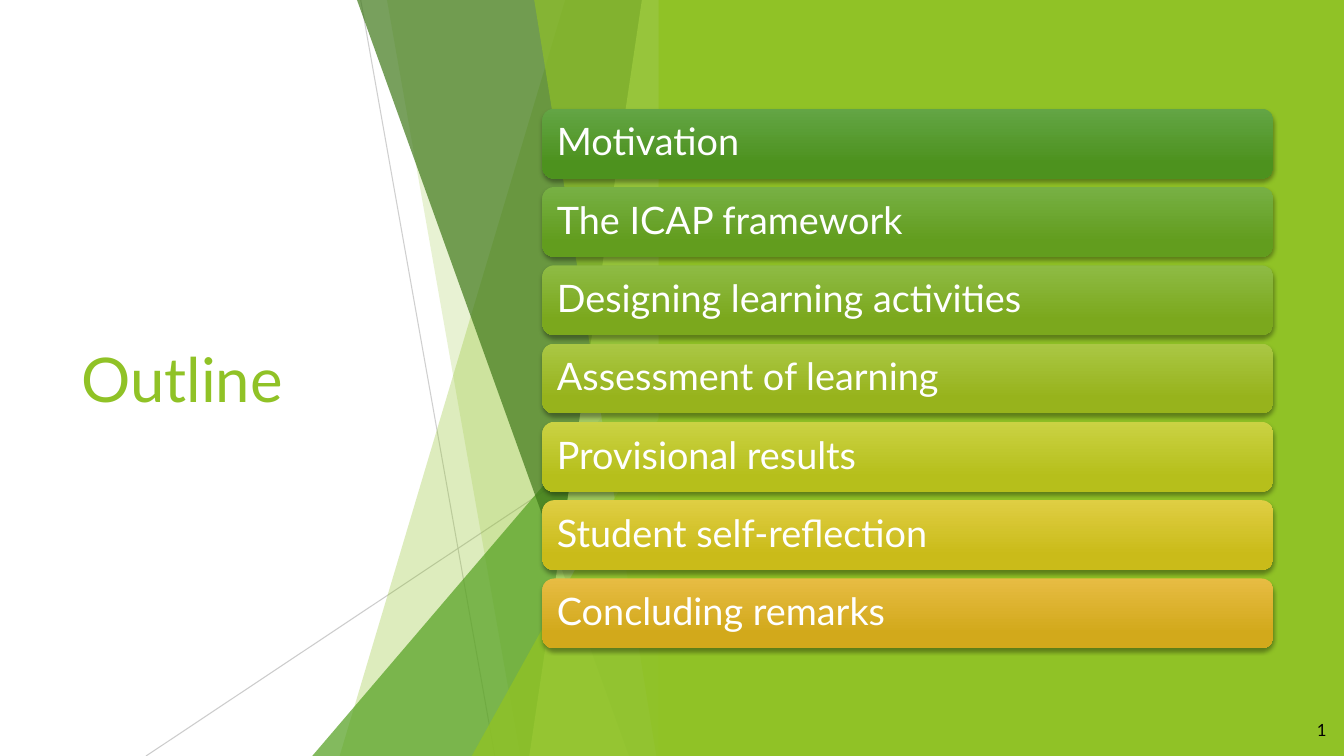
"""Build the outline slide with its faceted backdrop and agenda bars."""
from lxml import etree
from pptx import Presentation
from pptx.dml.color import RGBColor
from pptx.enum import shapes, text
from pptx.oxml import ns
from pptx.util import Cm, Pt

WIDTH, HEIGHT = 33.87, 19.05
FONT = "Lato"
WHITE = RGBColor(0xFF, 0xFF, 0xFF)
BLACK = RGBColor(0x00, 0x00, 0x00)
GREY = RGBColor(0xBF, 0xBF, 0xBF)
LIME = RGBColor(0x90, 0xC2, 0x26)
PALE_LIME = RGBColor(0xC0, 0xE4, 0x74)
GREEN = RGBColor(0x54, 0xA0, 0x21)
DARK_GREEN = RGBColor(0x3F, 0x78, 0x19)

FACET_TOP, FACET_RIGHT = -0.02, 16.92
RAYS = [
    (9.09, 0, 12.47, HEIGHT, 75),
    (FACET_RIGHT, 10.24, 3.68, HEIGHT, 80),
]
BACK_FACETS = [(14.25, 8.56, LIME, 30), (9.75, 13.11, LIME, 20)]
FRONT_FACETS = [
    (8.99, 15.85, DARK_GREEN, 70),
    (16.18, 13.34, PALE_LIME, 70),
    (13.46, 16.54, LIME, 65),
]

BAR_LEFT, BAR_TOP, BAR_WIDTH, BAR_HEIGHT = 13.67, 2.74, 18.42, 1.76
BAR_PITCH = 1.973
AGENDA = [
    ("Motivation", RGBColor(0x63, 0xA5, 0x45), RGBColor(0x4D, 0x92, 0x1E)),
    ("The ICAP framework", RGBColor(0x77, 0xB0, 0x44), RGBColor(0x62, 0x9D, 0x1E)),
    ("Designing learning activities", RGBColor(0x8E, 0xBB, 0x44), RGBColor(0x7B, 0xA8, 0x1D)),
    ("Assessment of learning", RGBColor(0xAA, 0xC7, 0x44), RGBColor(0x97, 0xB3, 0x1C)),
    ("Provisional results", RGBColor(0xCA, 0xD2, 0x43), RGBColor(0xB6, 0xBF, 0x1B)),
    ("Student self-reflection", RGBColor(0xDF, 0xCE, 0x43), RGBColor(0xCA, 0xBB, 0x19)),
    ("Concluding remarks", RGBColor(0xE7, 0xBC, 0x43), RGBColor(0xD2, 0xA9, 0x1B)),
]


def set_opacity(color, percent):
    """Give a colour element the opacity in percent."""
    etree.SubElement(color, ns.qn("a:alpha"), val=str(percent * 1000))


def paint(shape, color, opacity=100):
    """Fill a shape plainly, without outline or shadow."""
    shape.shadow.inherit = False
    shape.line.fill.background()
    shape.fill.solid()
    shape.fill.fore_color.rgb = color
    if opacity < 100:
        set_opacity(shape.fill._xPr.find(".//" + ns.qn("a:srgbClr")), opacity)


def add_ray(slide, x1, y1, x2, y2, opacity):
    """Draw a thin translucent grey line."""
    ray = slide.shapes.add_connector(
        shapes.MSO_CONNECTOR.STRAIGHT, Cm(x1), Cm(y1), Cm(x2), Cm(y2))
    ray.line.width = Pt(0.75)
    ray.line.color.rgb = GREY
    properties = ray._element.spPr
    set_opacity(properties.find(".//" + ns.qn("a:srgbClr")), opacity)
    etree.SubElement(properties, ns.qn("a:effectLst"))


def add_facet(slide, top_x, bottom_x, color, opacity):
    """Draw a full-height facet with a slanted left edge."""
    outline = slide.shapes.build_freeform(Cm(top_x), Cm(FACET_TOP))
    outline.add_line_segments([
        (Cm(FACET_RIGHT), Cm(FACET_TOP)),
        (Cm(FACET_RIGHT), Cm(HEIGHT)),
        (Cm(bottom_x), Cm(HEIGHT)),
    ])
    paint(outline.convert_to_shape(), color, opacity)


def add_wedge(slide, left, top, color, opacity):
    """Draw a right triangle reaching the facet edge and the slide bottom."""
    wedge = slide.shapes.add_shape(
        shapes.MSO_SHAPE.ISOSCELES_TRIANGLE, Cm(left), Cm(top),
        Cm(FACET_RIGHT - left), Cm(HEIGHT - top))
    wedge.adjustments[0] = 1
    paint(wedge, color, opacity)


def write(shape, wording, size, color, align=text.PP_ALIGN.LEFT):
    """Put one vertically centred paragraph into a shape."""
    frame = shape.text_frame
    frame.word_wrap = True
    frame.vertical_anchor = text.MSO_ANCHOR.MIDDLE
    line = frame.paragraphs[0]
    line.text = wording
    line.alignment = align
    line.font.name = FONT
    line.font.size = Pt(size)
    line.font.color.rgb = color
    return line


def add_label(slide, left, top, width, height, *wording):
    """Add a text box with one paragraph."""
    label = slide.shapes.add_textbox(Cm(left), Cm(top), Cm(width), Cm(height))
    write(label, *wording)


def add_shadow(shape):
    """Cast a soft black shadow straight down."""
    shape.shadow.inherit = False
    effects = shape._element.spPr.find(ns.qn("a:effectLst"))
    shadow = etree.SubElement(
        effects, ns.qn("a:outerShdw"), blurRad=str(Pt(3)), dist=str(Pt(2)),
        dir="5400000", rotWithShape="0")
    set_opacity(etree.SubElement(shadow, ns.qn("a:srgbClr"), val=str(BLACK)), 35)


def add_bar(slide, top, topic, light, deep):
    """Add an agenda bar with a vertical gradient."""
    bar = slide.shapes.add_shape(
        shapes.MSO_SHAPE.ROUNDED_RECTANGLE,
        Cm(BAR_LEFT), Cm(top), Cm(BAR_WIDTH), Cm(BAR_HEIGHT))
    bar.line.fill.background()
    bar.fill.gradient()
    bar.fill.gradient_angle = 270
    for stop, position, color in zip(bar.fill.gradient_stops, (0, 0.78), (light, deep)):
        stop.position = position
        stop.color.rgb = color
    add_shadow(bar)
    frame = bar.text_frame
    frame.margin_left = frame.margin_right = Cm(0.28)
    frame.margin_top = frame.margin_bottom = 0
    write(bar, topic, 27, WHITE).line_spacing = 0.9


def main():
    """Assemble and save the slide."""
    deck = Presentation()
    deck.slide_width, deck.slide_height = Cm(WIDTH), Cm(HEIGHT)
    slide = deck.slides.add_slide(deck.slide_layouts[6])

    add_label(slide, 1.8, 3.84, 9.86, 11.38, "Outline", 44, LIME)
    for ray in RAYS:
        add_ray(slide, *ray)
    for facet in BACK_FACETS:
        add_facet(slide, *facet)
    add_wedge(slide, 7.87, 8.46, GREEN, 72)
    for facet in FRONT_FACETS:
        add_facet(slide, *facet)
    add_wedge(slide, 11.89, 9.98, LIME, 80)

    panel_left = 16.6
    panel = slide.shapes.add_shape(
        shapes.MSO_SHAPE.RECTANGLE, Cm(panel_left), 0,
        Cm(WIDTH - panel_left), Cm(HEIGHT))
    paint(panel, LIME)
    for row, item in enumerate(AGENDA):
        add_bar(slide, BAR_TOP + row * BAR_PITCH, *item)
    add_label(slide, 31.78, 17.88, 1.9, 1.02, "1", 12, BLACK, text.PP_ALIGN.RIGHT)

    deck.save("out.pptx")


if __name__ == "__main__":
    main()
